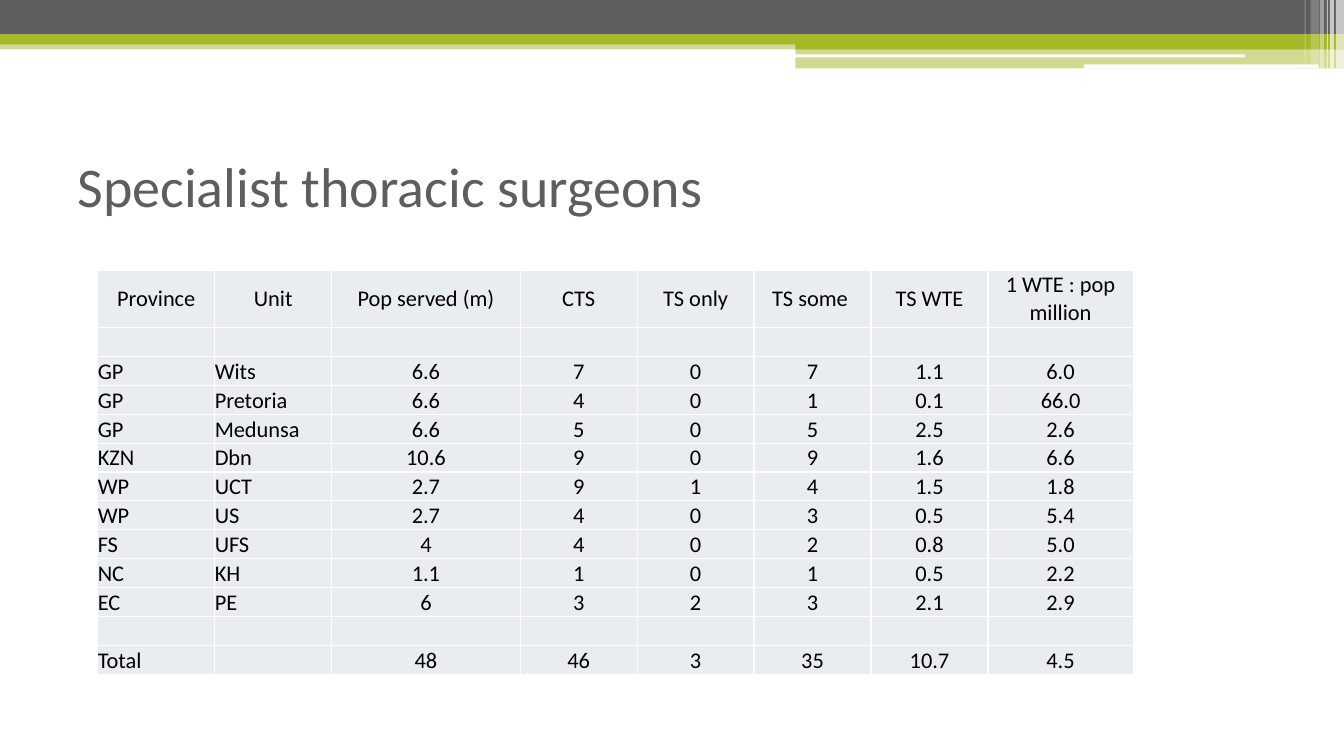
from dataclasses import dataclass

from lxml.etree import SubElement
from pptx import Presentation
from pptx.dml.color import RGBColor
from pptx.enum.shapes import MSO_SHAPE as Shape
from pptx.enum.text import MSO_ANCHOR as Anchor, PP_ALIGN as Align
from pptx.oxml.ns import qn
from pptx.util import Inches, Pt


@dataclass(frozen=True)
class Theme:
    font: str = "Calibri"
    title_size: int = 40
    table_size: int = 16
    border_width: int = 1
    grey: str = "5E5E5E"
    green: str = "A6B727"
    white: str = "FFFFFF"
    black: str = "000000"
    cell: str = "E9EDF2"


THEME = Theme()

# left, top, width, height, colour, opacity in percent
BANDS = [
    (0, 0.4, 13.33, 0.09, THEME.green, 50),
    (0, 0, 13.33, 0.34, THEME.grey, 100),
    (0, 0.34, 13.33, 0.1, THEME.green, 100),
    (7.89, 0.39, 5.44, 0.1, THEME.green, 100),
    (7.89, 0.48, 5.44, 0.2, THEME.green, 50),
]
# left, top, width, height
ROUNDED_LINES = [(7.88, 0.54, 4.47, 0.03), (10.75, 0.64, 2.33, 0.04)]
# left, width, height, opacity in percent
STRIPES = [
    (13.25, 0.08, 0.68, 65),
    (13.19, 0.04, 0.68, 65),
    (13.16, 0.01, 0.68, 60),
    (13.09, 0.04, 0.68, 40),
    (13, 0.08, 0.64, 20),
    (12.94, 0.01, 0.64, 30),
]

HEADERS = ["Province", "Unit", "Pop served (m)", "CTS", "TS only", "TS some ",
           "TS WTE", "1 WTE : pop million"]
BLANK_ROW = [""] * len(HEADERS)
UNITS = [
    ["GP", "Wits", "6.6", "7", "0", "7", "1.1", "6.0"],
    ["GP", "Pretoria", "6.6", "4", "0", "1", "0.1", "66.0"],
    ["GP", "Medunsa", "6.6", "5", "0", "5", "2.5", "2.6"],
    ["KZN", "Dbn", "10.6", "9", "0", "9", "1.6", "6.6"],
    ["WP", "UCT", "2.7", "9", "1", "4", "1.5", "1.8"],
    ["WP", "US", "2.7", "4", "0", "3", "0.5", "5.4"],
    ["FS", "UFS", "4", "4", "0", "2", "0.8", "5.0"],
    ["NC", "KH", "1.1", "1", "0", "1", "0.5", "2.2"],
    ["EC", "PE", "6", "3", "2", "3", "2.1", "2.9"],
]
TOTAL = ["Total", "", "48", "46", "3", "35", "10.7", "4.5"]
COLUMN_WIDTHS = [1.16, 1.16, 1.87, 1.16, 1.16, 1.16, 1.16, 1.44]
TEXT_COLUMNS = 2
HEADER_HEIGHT = 0.57


def set_values(target, values):
    for name, value in values.items():
        setattr(target, name, value)


class SlideBuilder:
    def __init__(self, slide, theme):
        self.slide = slide
        self.theme = theme

    def bar(self, place, color, opacity=100, kind=Shape.RECTANGLE):
        """Draw a flat bar without outline; opacity is in percent."""
        bar = self.slide.shapes.add_shape(kind, *map(Inches, place))
        bar.shadow.inherit = False
        bar.line.fill.background()
        bar.fill.solid()
        bar.fill.fore_color.rgb = RGBColor.from_string(color)
        if opacity < 100:
            tint = bar.element.spPr.find(qn("a:solidFill"))[0]
            SubElement(tint, qn("a:alpha"), val=str(opacity * 1000))

    def add_text(self, para, text, size, color):
        span = para.add_run()
        span.text = text
        set_values(span.font, {"name": self.theme.font, "size": Pt(size)})
        span.font.color.rgb = RGBColor.from_string(color)

    def title(self, place, text):
        box = self.slide.shapes.add_textbox(*map(Inches, place))
        frame = box.text_frame
        set_values(frame, {"word_wrap": True, "vertical_anchor": Anchor.MIDDLE})
        self.add_text(frame.paragraphs[0], text, self.theme.title_size, self.theme.grey)

    def table(self, place, rows, widths, header_height):
        """Fill a table whose rows below the header share the height equally."""
        shape = self.slide.shapes.add_table(len(rows), len(widths), *map(Inches, place))
        table = shape.table
        set_values(table, {"first_row": False, "horz_banding": False})
        for column, width in zip(table.columns, widths):
            column.width = Inches(width)
        row_height = (place[3] - header_height) / (len(rows) - 1)
        for r, texts in enumerate(rows):
            table.rows[r].height = Inches(row_height if r else header_height)
            for c, text in enumerate(texts):
                left = r > 0 and c < TEXT_COLUMNS
                self.cell(table.cell(r, c), text,
                          Align.LEFT if left else Align.CENTER,
                          Anchor.BOTTOM if r else Anchor.MIDDLE)

    def cell(self, cell, text, align, anchor):
        set_values(cell, {"margin_left": 0, "margin_right": 0, "margin_top": 0,
                          "margin_bottom": 0, "vertical_anchor": anchor})
        self.borders(cell)
        cell.fill.solid()
        cell.fill.fore_color.rgb = RGBColor.from_string(self.theme.cell)
        para = cell.text_frame.paragraphs[0]
        para.alignment = align
        if text:
            self.add_text(para, text, self.theme.table_size, self.theme.black)
        else:
            # Keeps an empty row from growing to the default type size
            SubElement(para._p, qn("a:endParaRPr"), sz=str(self.theme.table_size * 100))

    def borders(self, cell):
        properties = cell._tc.get_or_add_tcPr()
        for side in ("lnL", "lnR", "lnT", "lnB"):
            line = SubElement(properties, qn(f"a:{side}"),
                              w=str(Pt(self.theme.border_width)))
            fill = SubElement(line, qn("a:solidFill"))
            SubElement(fill, qn("a:srgbClr"), val=self.theme.white)


def main():
    deck = Presentation()
    set_values(deck, {"slide_width": Inches(13.33), "slide_height": Inches(7.5)})
    page = SlideBuilder(deck.slides.add_slide(deck.slide_layouts[6]), THEME)

    for *place, color, opacity in BANDS:
        page.bar(place, color, opacity)
    for place in ROUNDED_LINES:
        page.bar(place, THEME.white, kind=Shape.ROUNDED_RECTANGLE)
    for left, width, height, opacity in STRIPES:
        page.bar((left, 0, width, height), THEME.white, opacity)

    page.title((0.67, 1.25, 12, 1.17), "Specialist thoracic surgeons")
    rows = [HEADERS, BLANK_ROW, *UNITS, BLANK_ROW, TOTAL]
    page.table((0.97, 2.68, 10.29, 4.01), rows, COLUMN_WIDTHS, HEADER_HEIGHT)
    deck.save("out.pptx")


if __name__ == "__main__":
    main()
